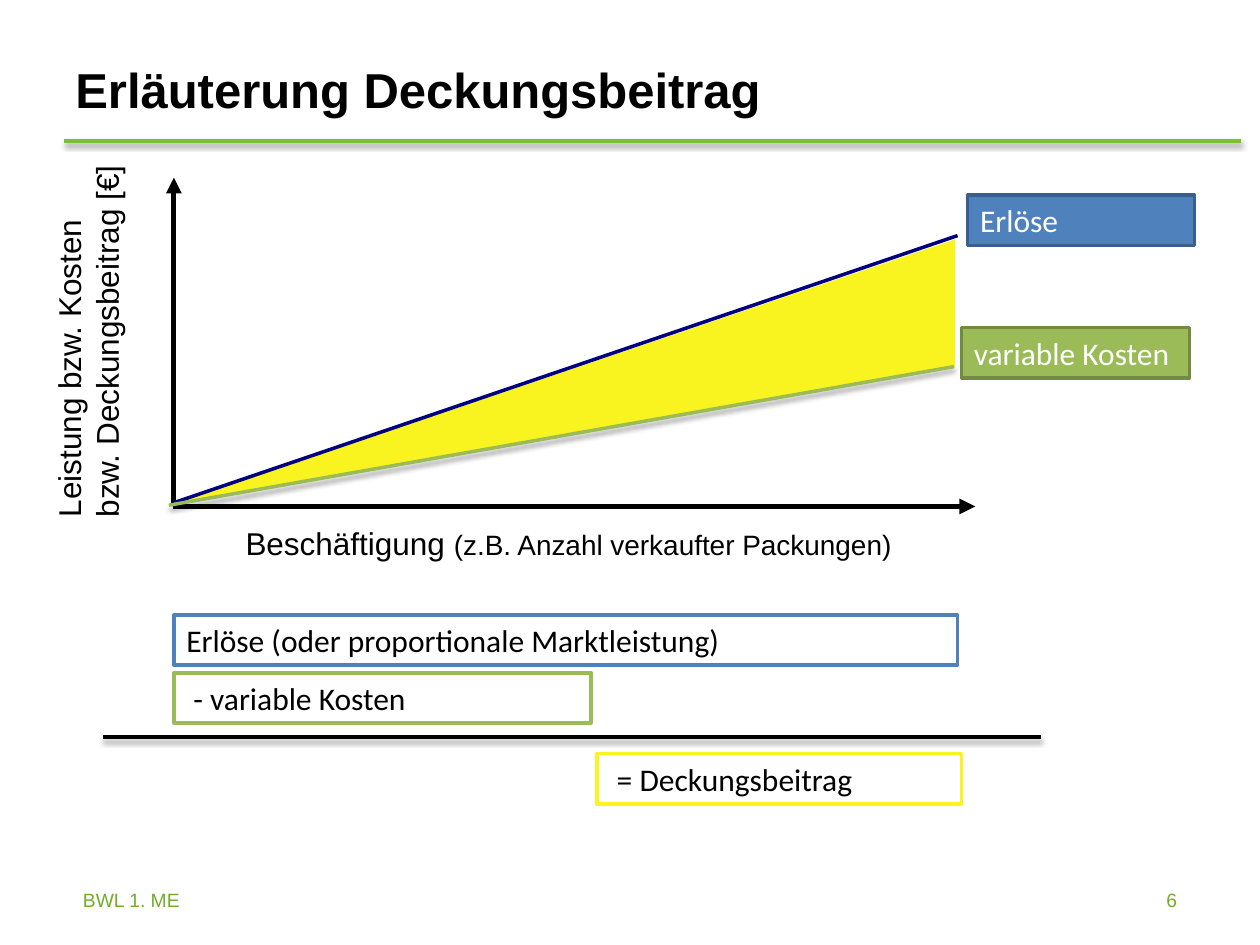
from lxml import etree
from pptx import Presentation
from pptx.dml.color import RGBColor
from pptx.enum.shapes import MSO_CONNECTOR, MSO_SHAPE
from pptx.enum.text import MSO_ANCHOR, PP_ALIGN
from pptx.oxml.ns import qn
from pptx.util import Inches, Pt

STRAIGHT = MSO_CONNECTOR.STRAIGHT
RECTANGLE = MSO_SHAPE.RECTANGLE
TOP, MIDDLE = MSO_ANCHOR.TOP, MSO_ANCHOR.MIDDLE
LEFT, RIGHT = PP_ALIGN.LEFT, PP_ALIGN.RIGHT

COLUMNS, ROWS = 100, 75
BOX_HEIGHT = 4
ORIGIN = (13.8, 40.1)
COLORS = {
    "black": "000000",
    "white": "FFFFFF",
    "rule": "7CBF33",
    "footer": "71AD2A",
    "revenue": "4F81BD",
    "revenue_edge": "3A5F8C",
    "revenue_line": "000080",
    "cost": "9BBB59",
    "cost_edge": "738A42",
    "margin": "F9F420",
}


def rgb(name):
    return RGBColor.from_string(COLORS[name])


def write(shape, *spans, size=18, font="Arial", color="black", bold=False,
          align=LEFT, anchor=TOP):
    """Fill a shape with one paragraph; a span is text or a (text, size) pair."""
    frame = shape.text_frame
    frame.word_wrap = True
    frame.vertical_anchor = anchor
    para = frame.paragraphs[0]
    para.alignment = align
    for item in spans:
        text, points = item if isinstance(item, tuple) else (item, size)
        for number, line in enumerate(text.split("\n")):
            if number:
                para.add_line_break()
            span = para.add_run()
            span.text = line
            span.font.size = Pt(points)
            span.font.name = font
            span.font.bold = bold
            span.font.color.rgb = rgb(color)


class SlidePainter:
    """Draws on one slide; all lengths are columns and rows of its grid."""

    def __init__(self, deck):
        self.slide = deck.slides.add_slide(deck.slide_layouts[6])
        self.shapes = self.slide.shapes
        self.column = deck.slide_width / COLUMNS
        self.row = deck.slide_height / ROWS

    def place(self, x, y):
        return round(x * self.column), round(y * self.row)

    def text(self, x, y, width, height, *spans, rotation=0, **style):
        box = self.shapes.add_textbox(*self.place(x, y), *self.place(width, height))
        box.rotation = rotation
        write(box, *spans, **style)

    def box(self, x, y, width, *spans, fill="white", edge=None, **style):
        box = self.shapes.add_shape(
            RECTANGLE, *self.place(x, y), *self.place(width, BOX_HEIGHT))
        box.shadow.inherit = False
        box.fill.solid()
        box.fill.fore_color.rgb = rgb(fill)
        if edge:
            box.line.color.rgb = rgb(edge)
            box.line.width = Pt(2)
        else:
            box.line.fill.background()
        write(box, *spans, **style)

    def line(self, start, end, color="black", width=2, arrow=False, shadow=False):
        line = self.shapes.add_connector(STRAIGHT, *self.place(*start), *self.place(*end))
        line.line.color.rgb = rgb(color)
        line.line.width = Pt(width)
        if arrow:
            etree.SubElement(line.line._get_or_add_ln(), qn("a:tailEnd"), type="triangle")
        effects = etree.SubElement(line._element.spPr, qn("a:effectLst"))
        if shadow:
            outer = etree.SubElement(
                effects, qn("a:outerShdw"), blurRad=str(Pt(3.1)), dist=str(Pt(1.6)),
                dir="5400000", rotWithShape="0")
            tint = etree.SubElement(outer, qn("a:srgbClr"), val=COLORS["black"])
            etree.SubElement(tint, qn("a:alpha"), val="38000")

    def area(self, points, fill):
        first, *others = [self.place(*point) for point in points]
        builder = self.shapes.build_freeform(*first)
        builder.add_line_segments(others, close=True)
        area = builder.convert_to_shape()
        area.shadow.inherit = False
        area.fill.solid()
        area.fill.fore_color.rgb = rgb(fill)
        area.line.fill.background()


def draw_chart(painter):
    x, y = ORIGIN
    painter.area([(13.5, y), (75.8, 19), (75.8, 29.2)], "margin")
    painter.line(ORIGIN, (x, 14.1), width=3, arrow=True)
    painter.line((13.7, 40.2), (77.4, 40.2), width=3, arrow=True)
    painter.line((x, 39.9), (76, 18.7), "revenue_line")
    painter.box(18.5, 41.1, 55.1, "Beschäftigung ",
                ("(z.B. Anzahl verkaufter Packungen)", 16))
    painter.text(-8.6, 22.9, 31.2, 7.1,
                 "Leistung bzw. Kosten \nbzw. Deckungsbeitrag [€]", rotation=270)
    painter.line((13.4, y), (75.7, 29.1), "cost", shadow=True)
    label = {"font": "Calibri", "color": "white"}
    painter.box(76.8, 15.5, 18, "Erlöse", fill="revenue", edge="revenue_edge", **label)
    painter.box(76.3, 26, 18.1, "variable Kosten", fill="cost", edge="cost_edge", **label)


def draw_calculation(painter):
    x = ORIGIN[0]
    terms = [
        (x, 48.8, 62.2, "Erlöse (oder proportionale Marktleistung)", "revenue"),
        (x, 53.4, 33.1, " - variable Kosten", "cost"),
        (47.4, 59.8, 28.9, " = Deckungsbeitrag", "margin"),
    ]
    for left, top, width, text, edge in terms:
        painter.box(left, top, width, text, edge=edge, font="Calibri")
    painter.line((8.2, 58.5), (82.6, 58.5), shadow=True)


def main():
    deck = Presentation()
    deck.slide_width, deck.slide_height = Inches(10), Inches(7.5)
    painter = SlidePainter(deck)
    painter.line((5.1, 11.2), (98.5, 11.2), "rule", shadow=True)
    painter.text(5, 3.7, 88.9, 6.7, "Erläuterung Deckungsbeitrag",
                 size=28, bold=True, anchor=MIDDLE)
    draw_chart(painter)
    draw_calculation(painter)
    footer = {"size": 11, "color": "footer"}
    painter.text(73.6, 70, 20.8, 3.3, "6", align=RIGHT, **footer)
    painter.text(5.6, 70, 88.9, 3.3, "BWL 1. ME", **footer)
    deck.save("out.pptx")


if __name__ == "__main__":
    main()
